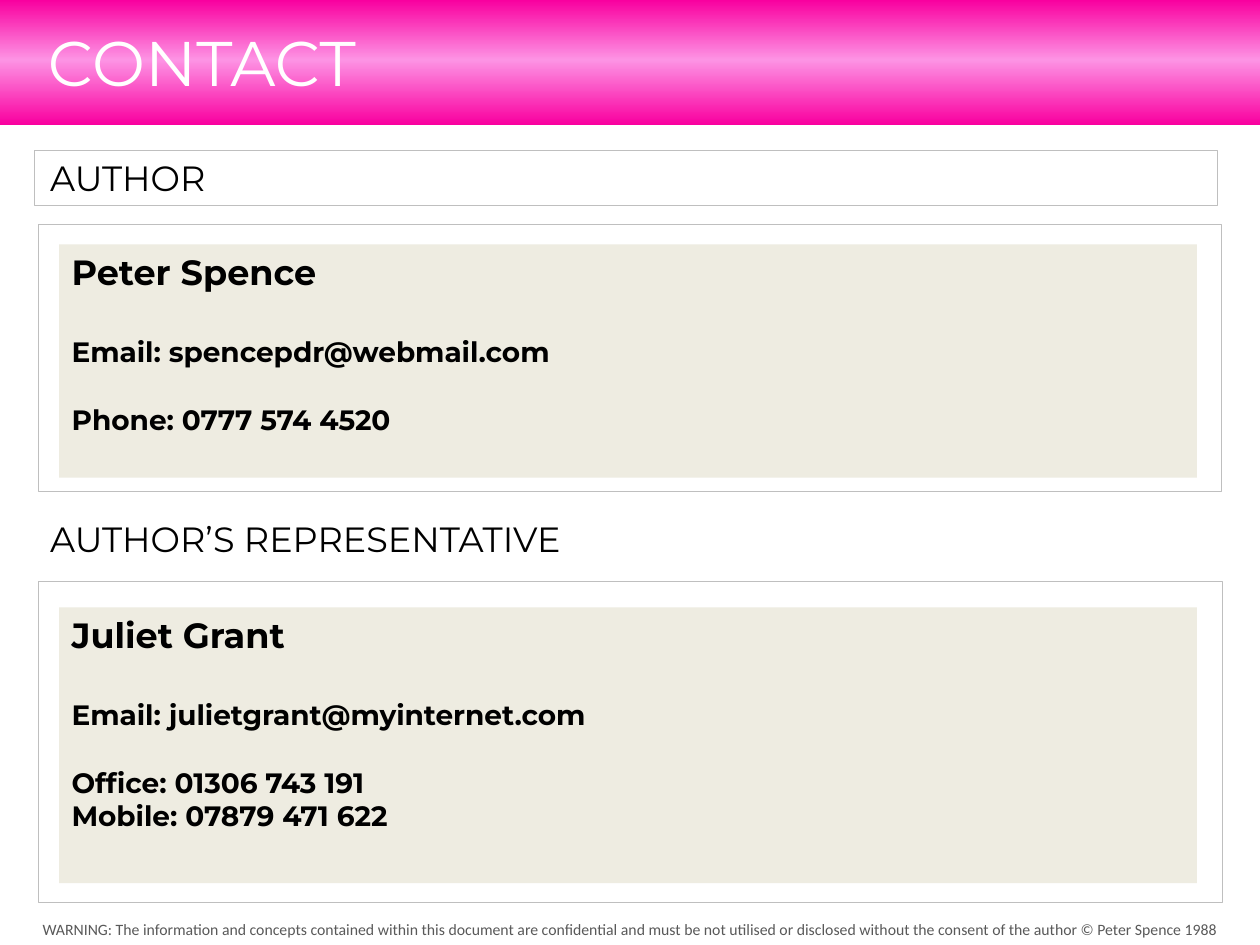
from copy import deepcopy

from pptx import Presentation
from pptx.dml.color import RGBColor
from pptx.enum.shapes import MSO_SHAPE
from pptx.enum.text import MSO_ANCHOR, PP_ALIGN
from pptx.util import Inches, Pt

RECTANGLE = MSO_SHAPE.RECTANGLE
TOP = MSO_ANCHOR.TOP
LEFT, CENTER = PP_ALIGN.LEFT, PP_ALIGN.CENTER

WHITE = RGBColor(0xFF, 0xFF, 0xFF)
BLACK = RGBColor(0x00, 0x00, 0x00)
CREAM = RGBColor(0xEE, 0xEC, 0xE1)
BORDER = RGBColor(0xBF, 0xBF, 0xBF)
FOOTER_GREY = RGBColor(0x59, 0x59, 0x59)
PINK = RGBColor(0xF9, 0x00, 0x9F)
LIGHT_PINK = RGBColor(0xFD, 0x93, 0xE4)

# The slide is a grid of 100 columns by 75 rows of square cells
COLUMNS, ROWS = 100, 75
CELL = Inches(0.1)
HEADING_ROWS = 4.4
CARD_INDENT = 1.7
CARD_COLUMNS = 90.3


def cells(box):
    return [round(n * CELL) for n in box]


def add_rectangle(slide, box, fill=None, border=None):
    rectangle = slide.shapes.add_shape(RECTANGLE, *cells(box))
    rectangle.shadow.inherit = False
    if fill is not None:
        rectangle.fill.solid()
        rectangle.fill.fore_color.rgb = fill
    if border is None:
        rectangle.line.fill.background()
    else:
        rectangle.line.color.rgb = border
        rectangle.line.width = Pt(0.25)
    return rectangle


def write(frame, lines, color=BLACK, font="Montserrat", bold=False,
          align=LEFT, wrap=True):
    """Fill a text frame with (text, size, space before) lines."""
    frame.word_wrap = wrap
    frame.vertical_anchor = TOP
    for i, (text, size, gap) in enumerate(lines):
        paragraph = frame.paragraphs[0] if i == 0 else frame.add_paragraph()
        paragraph.alignment = align
        paragraph.space_before = Pt(gap)
        run = paragraph.add_run()
        run.text = text
        run.font.color.rgb = color
        for name, value in {"name": font, "size": Pt(size), "bold": bold}.items():
            setattr(run.font, name, value)


def add_text(slide, box, text, size, **style):
    frame = slide.shapes.add_textbox(*cells(box)).text_frame
    write(frame, [(text, size, 0)], **style)


def title_band(slide, box, text):
    left, top, width, height = box
    band = add_rectangle(slide, box)
    band.fill.gradient()
    band.fill.gradient_angle = 270
    first = band.fill.gradient_stops[0]._gs
    first.addnext(deepcopy(first))
    for stop, (position, color) in zip(
            band.fill.gradient_stops,
            [(0, PINK), (0.48, LIGHT_PINK), (1, PINK)]):
        stop.position = position
        stop.color.rgb = color

    # The title lies in front of the band
    title = slide.shapes.title
    title.left, title.top, title.width, title.height = cells(
        (left + 2.8, top + 1.4, 62.8, height - 2.8))
    write(title.text_frame, [(text, 36, 0)], color=WHITE)
    band._element.addnext(title._element)


def contact_section(slide, box, heading, lines, gap, pad_top, pad_bottom,
                    outlined=False):
    left, top, width, height = box
    if outlined:
        add_rectangle(slide, (left - 0.3, top, width, HEADING_ROWS), WHITE, BORDER)
    add_text(slide, (left, top, width, HEADING_ROWS), heading, 20)

    # Outlined frame below the heading
    frame_top = top + HEADING_ROWS + gap
    frame_rows = top + height - frame_top
    add_rectangle(slide, (left, frame_top, width, frame_rows), WHITE, BORDER)

    # Filled card with the contact details
    card = add_rectangle(slide, (left + CARD_INDENT, frame_top + pad_top,
                                 CARD_COLUMNS, frame_rows - pad_top - pad_bottom),
                         CREAM)
    write(card.text_frame, lines, bold=True)


def footer(slide, box, text):
    add_text(slide, box, text, 9, color=FOOTER_GREY, font="Calibri",
             align=CENTER, wrap=False)


def main():
    deck = Presentation()
    deck.slide_width, deck.slide_height = cells((COLUMNS, ROWS))
    slide = deck.slides.add_slide(deck.slide_layouts[5])

    title_band(slide, (0, 0, COLUMNS, 9.9), "CONTACT")
    contact_section(
        slide, (3, 11.9, 93.9, 27.1), "AUTHOR",
        [("Peter Spence", 20, 0),
         ("Email: spencepdr@webmail.com", 16, 24),
         ("Phone: 0777 574 4520", 16, 19.5)],
        gap=1.5, pad_top=1.6, pad_bottom=1.1, outlined=True)
    contact_section(
        slide, (3, 40.6, 94, 31), "AUTHOR’S REPRESENTATIVE",
        [("Juliet Grant", 20, 0),
         ("Email: julietgrant@myinternet.com", 16, 24),
         ("Office: 01306 743 191", 16, 19.5),
         ("Mobile: 07879 471 622", 16, 0)],
        gap=1.1, pad_top=2.1, pad_bottom=1.5)
    footer(slide, (1.8, 72.5, 96.3, 2.5),
           "WARNING: The information and concepts contained within this document "
           "are confidential and must be not utilised or disclosed without the "
           "consent of the author © Peter Spence 1988")

    deck.save("out.pptx")


if __name__ == "__main__":
    main()
